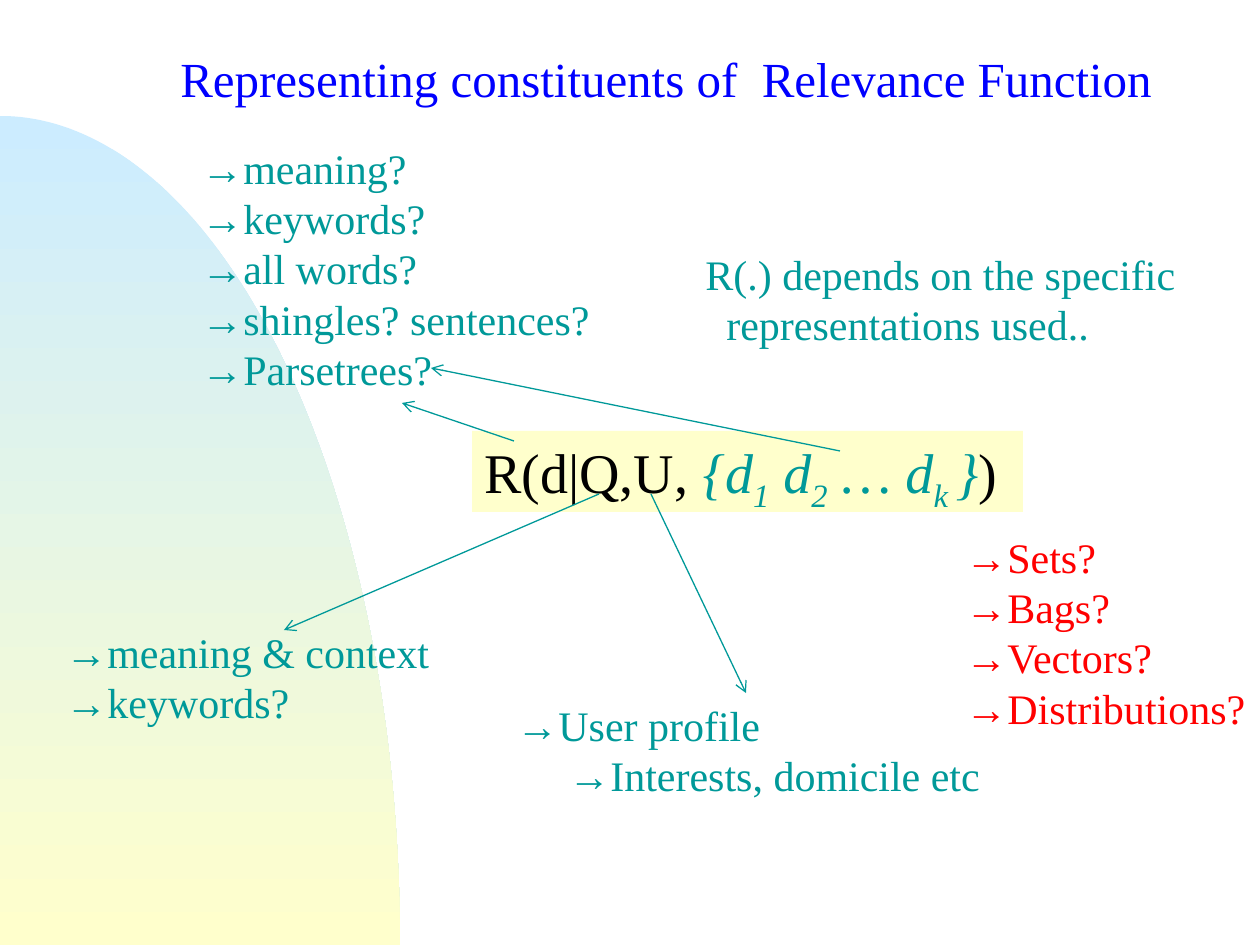
from math import cos, pi, sin

from lxml import etree
from pptx import Presentation
from pptx.dml.color import RGBColor
from pptx.enum.shapes import MSO_CONNECTOR, MSO_SHAPE
from pptx.enum.text import MSO_ANCHOR, MSO_AUTO_SIZE, PP_ALIGN
from pptx.oxml.ns import qn
from pptx.util import Pt

LINE, RECT = MSO_CONNECTOR.STRAIGHT, MSO_SHAPE.RECTANGLE
TOP, LEFT, GROW = MSO_ANCHOR.TOP, PP_ALIGN.LEFT, MSO_AUTO_SIZE.SHAPE_TO_FIT_TEXT

SCALE = 914400 / 126  # EMU in one px
WIDE, HIGH = 1260, 945


class Theme:
    font = "Times New Roman"
    ink, teal, blue, red = "010000", "009999", "0000FF", "FF0000"
    sky, cream = "CCECFF", "FFFFCC"
    head, body, math = 28, 24, 32
    line = 0.75


def px(*nums):
    return [round(n * SCALE) for n in nums]


def rgb(code):
    return RGBColor.from_string(code)


def apply(item, form):
    for name, value in form.items():
        setattr(item, name, value)


def setup(frame):
    apply(frame, {"word_wrap": False, "auto_size": GROW, "vertical_anchor": TOP})
    return frame


def write(para, text, size, color, italic=False, base=0):
    run = para.add_run()
    run.text = text
    apply(run.font, {"name": Theme.font, "size": Pt(size), "italic": italic})
    run.font.color.rgb = rgb(color)
    if base:
        run.font._element.set("baseline", str(base * 1000))


def arc(slide, box, steps=90):
    """Quarter ellipse that fills the box, centred on its lower left corner."""
    x, y, w, h = px(*box)
    turns = [pi / 2 * i / steps for i in range(steps + 1)]
    rim = [(x + w * sin(t), y + h - h * cos(t)) for t in turns]
    pen = slide.shapes.build_freeform(*rim[0])
    pen.add_line_segments(rim[1:] + [(x, y + h)], close=True)
    shape = pen.convert_to_shape()
    shape.shadow.inherit = False
    shape.line.fill.background()
    shape.fill.gradient()
    shape.fill.gradient_angle = 270
    for stop, color in zip(shape.fill.gradient_stops, (Theme.sky, Theme.cream)):
        stop.color.rgb = rgb(color)


def note(slide, box, lines, color=Theme.teal, size=Theme.body, indent=0):
    """Lines of text; those after the first are indented by the given px."""
    frame = setup(slide.shapes.add_textbox(*px(*box)).text_frame)
    for i, text in enumerate(lines):
        para = frame.add_paragraph() if i else frame.paragraphs[0]
        write(para, text, size, color)
        if i and indent:
            para._p.get_or_add_pPr().set("marL", str(px(indent)[0]))


def formula(slide, box):
    """Relevance function on a cream band."""
    shape = slide.shapes.add_shape(RECT, *px(*box))
    shape.shadow.inherit = False
    shape.line.fill.background()
    shape.fill.solid()
    shape.fill.fore_color.rgb = rgb(Theme.cream)
    para = setup(shape.text_frame).paragraphs[0]
    para.alignment = LEFT
    write(para, "R(d|Q,U,", Theme.math, Theme.ink)
    parts = [" {d", "1", " d", "2", " … d", "k ", "}"]
    for i, text in enumerate(parts):  # every second part is a subscript
        write(para, text, Theme.math, Theme.teal, True, -25 * (i % 2))
    write(para, ")", Theme.math, Theme.ink)


def arrow(slide, ends):
    link = slide.shapes.add_connector(LINE, *px(*ends))
    link.line.color.rgb = rgb(Theme.teal)
    link.line.width = Pt(Theme.line)
    etree.SubElement(link.line._get_or_add_ln(), qn("a:tailEnd"), type="arrow")
    etree.SubElement(link._element.spPr, qn("a:effectLst"))


def main():
    deck = Presentation()
    deck.slide_width, deck.slide_height = px(WIDE, HIGH)
    slide = deck.slides.add_slide(deck.slide_layouts[6])

    # Backdrop and formula
    arc(slide, (0, 116, 400, 829))
    formula(slide, (472, 431, 551, 81))

    # Title
    note(slide, (168, 42, 1007, 72),
         ["Representing constituents of  Relevance Function"],
         Theme.blue, Theme.head)

    # Document, query and user notes
    note(slide, (189, 136, 427, 267),
         ["→meaning?", "→keywords?", "→all words?",
          "→shingles? sentences?", "→Parsetrees?"])
    note(slide, (53, 620, 402, 115), ["→meaning & context", "→keywords?"])
    note(slide, (504, 693, 493, 115),
         ["→User profile", "→Interests, domicile etc"], indent=52)

    # Arrows from the formula to the notes
    for ends in ((514, 441, 402, 403), (599, 494, 284, 630),
                 (651, 494, 746, 693), (840, 451, 431, 368)):
        arrow(slide, ends)

    # Remark and choices of representation
    note(slide, (693, 242, 500, 115),
         ["R(.) depends on the specific", "representations used.."], indent=21)
    note(slide, (953, 525, 307, 217),
         ["→Sets?", "→Bags?", "→Vectors?", "→Distributions?"], Theme.red)

    deck.save("out.pptx")


if __name__ == "__main__":
    main()
